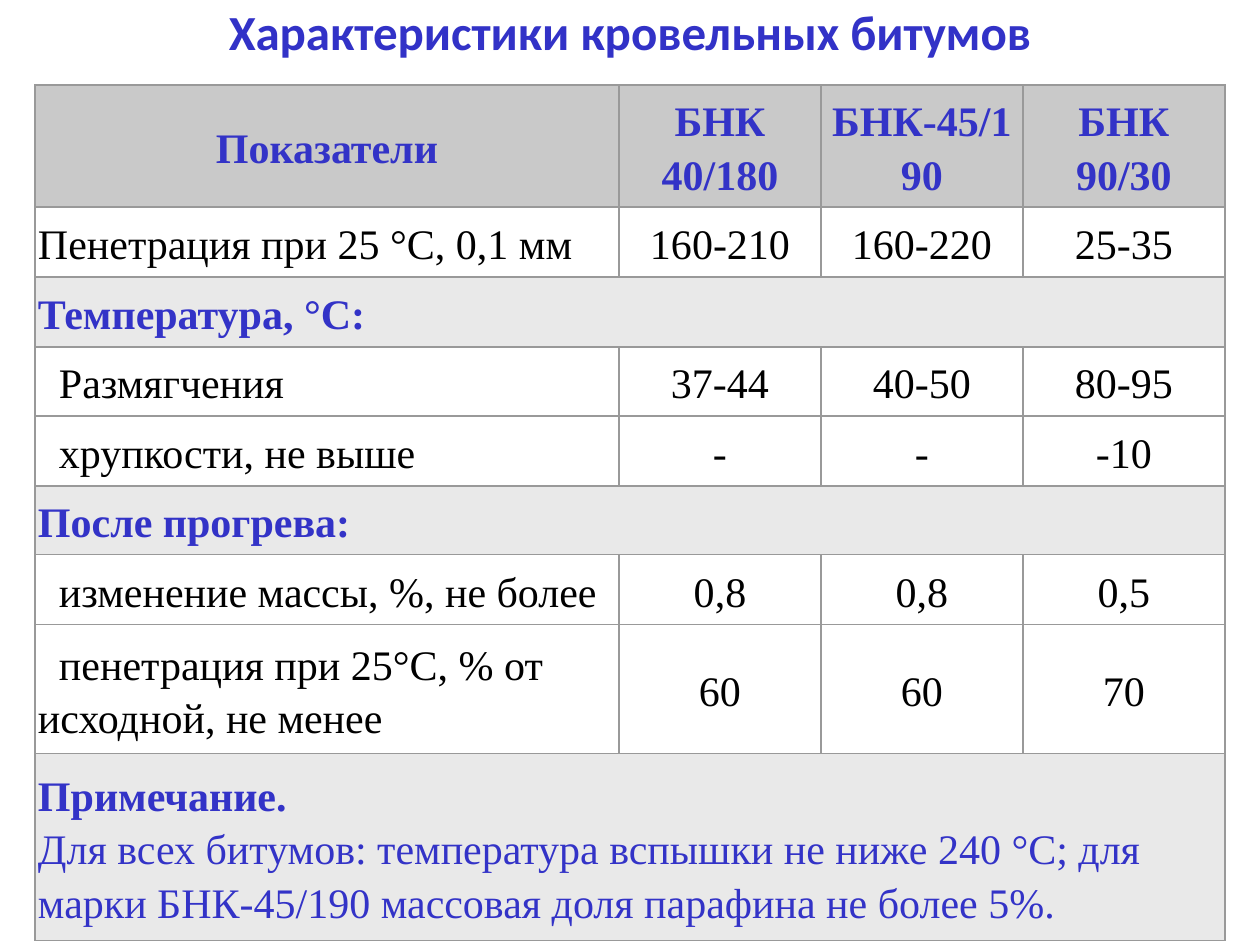
from lxml import etree
from pptx import Presentation
from pptx.dml.color import RGBColor
from pptx.enum.text import MSO_ANCHOR, MSO_AUTO_SIZE, PP_ALIGN
from pptx.oxml.ns import qn
from pptx.util import Emu, Pt

PX = 914400 // 126
MIDDLE = MSO_ANCHOR.MIDDLE
FIT_SHAPE = MSO_AUTO_SIZE.SHAPE_TO_FIT_TEXT
LEFT, CENTER = PP_ALIGN.LEFT, PP_ALIGN.CENTER
COLORS = {"title": "3232C7", "accent": "3333C7", "body": "000000",
          "header": "C9C9C9", "section": "E9E9E9", "border": "999999"}


def format_span(span, size, name, color, bold):
    for key, value in {"size": Pt(size), "name": name, "bold": bold}.items():
        setattr(span.font, key, value)
    span.font.color.rgb = RGBColor.from_string(COLORS[color])


def add_borders(cell):
    properties = cell._tc.get_or_add_tcPr()
    for side in ("a:lnL", "a:lnR", "a:lnT", "a:lnB"):
        line = etree.SubElement(properties, qn(side), w=str(Pt(1)))
        fill = etree.SubElement(line, qn("a:solidFill"))
        etree.SubElement(fill, qn("a:srgbClr"), val=COLORS["border"])


deck = Presentation()
deck.slide_width, deck.slide_height = Emu(1260 * PX), Emu(945 * PX)
page = deck.slides.add_slide(deck.slide_layouts[5])

# Title
title = page.shapes.title
for key, value in {"left": 212, "top": -5, "width": 836, "height": 72}.items():
    setattr(title, key, Emu(value * PX))
frame = title.text_frame
for key, value in {"word_wrap": False, "auto_size": FIT_SHAPE,
                   "vertical_anchor": MIDDLE}.items():
    setattr(frame, key, value)
para = frame.paragraphs[0]
para.alignment = CENTER
span = para.add_run()
span.text = "Характеристики кровельных битумов"
format_span(span, 28, "Calibri", "title", True)

# Table content: row kind, height, cell texts
ROWS = [
    ("header", 121, ["Показатели", "БНК 40/180", "БНК-45/190", "БНК 90/30"]),
    ("plain", 70, ["Пенетрация при 25 °С, 0,1 мм", "160-210", "160-220", "25-35"]),
    ("section", 70, ["Температура, °С:"]),
    ("indented", 69, ["Размягчения", "37-44", "40-50", "80-95"]),
    ("indented", 70, ["хрупкости, не выше", "-", "-", "-10"]),
    ("section", 69, ["После прогрева:"]),
    ("indented", 70, ["изменение массы, %, не более", "0,8", "0,8", "0,5"]),
    ("indented", 129, ["пенетрация при 25°С, % от исходной, не менее",
                       "60", "60", "70"]),
    ("section", 187, ["Примечание.\nДля всех битумов: температура вспышки не ниже "
                      "240 °С; для марки БНК-45/190 массовая доля парафина "
                      "не более 5%."]),
]
COLUMNS = [584, 202, 202, 202]

box = page.shapes.add_table(
    len(ROWS), len(COLUMNS), Emu(35 * PX), Emu(85 * PX),
    Emu(sum(COLUMNS) * PX), Emu(sum(height for _, height, _ in ROWS) * PX))
table = box.table
table.first_row = table.horz_banding = False
for column, width in zip(table.columns, COLUMNS):
    column.width = Emu(width * PX)

for row_index, (kind, height, texts) in enumerate(ROWS):
    table.rows[row_index].height = Emu(height * PX)
    if kind == "section":
        table.cell(row_index, 0).merge(table.cell(row_index, len(COLUMNS) - 1))

    # Borders and fills
    for cell in table.rows[row_index].cells:
        add_borders(cell)
        if kind in COLORS:
            cell.fill.solid()
            cell.fill.fore_color.rgb = RGBColor.from_string(COLORS[kind])
        else:
            cell.fill.background()

    # Texts
    for column_index, text in enumerate(texts):
        cell = table.cell(row_index, column_index)
        cell.vertical_anchor = MIDDLE
        for side in ("left", "right", "top", "bottom"):
            setattr(cell, f"margin_{side}", Emu(3 * PX))
        para = cell.text_frame.paragraphs[0]
        para.alignment = CENTER if column_index or kind == "header" else LEFT
        para.line_spacing = 1.15
        if kind == "indented" and column_index == 0:
            para._p.get_or_add_pPr().set("indent", str(Pt(12)))
        for line_index, line in enumerate(text.split("\n")):
            if line_index:
                para.add_line_break()
            span = para.add_run()
            span.text = line
            format_span(span, 24, "Times New Roman",
                        "accent" if kind in COLORS else "body",
                        kind in COLORS and line_index == 0)

deck.save("out.pptx")
